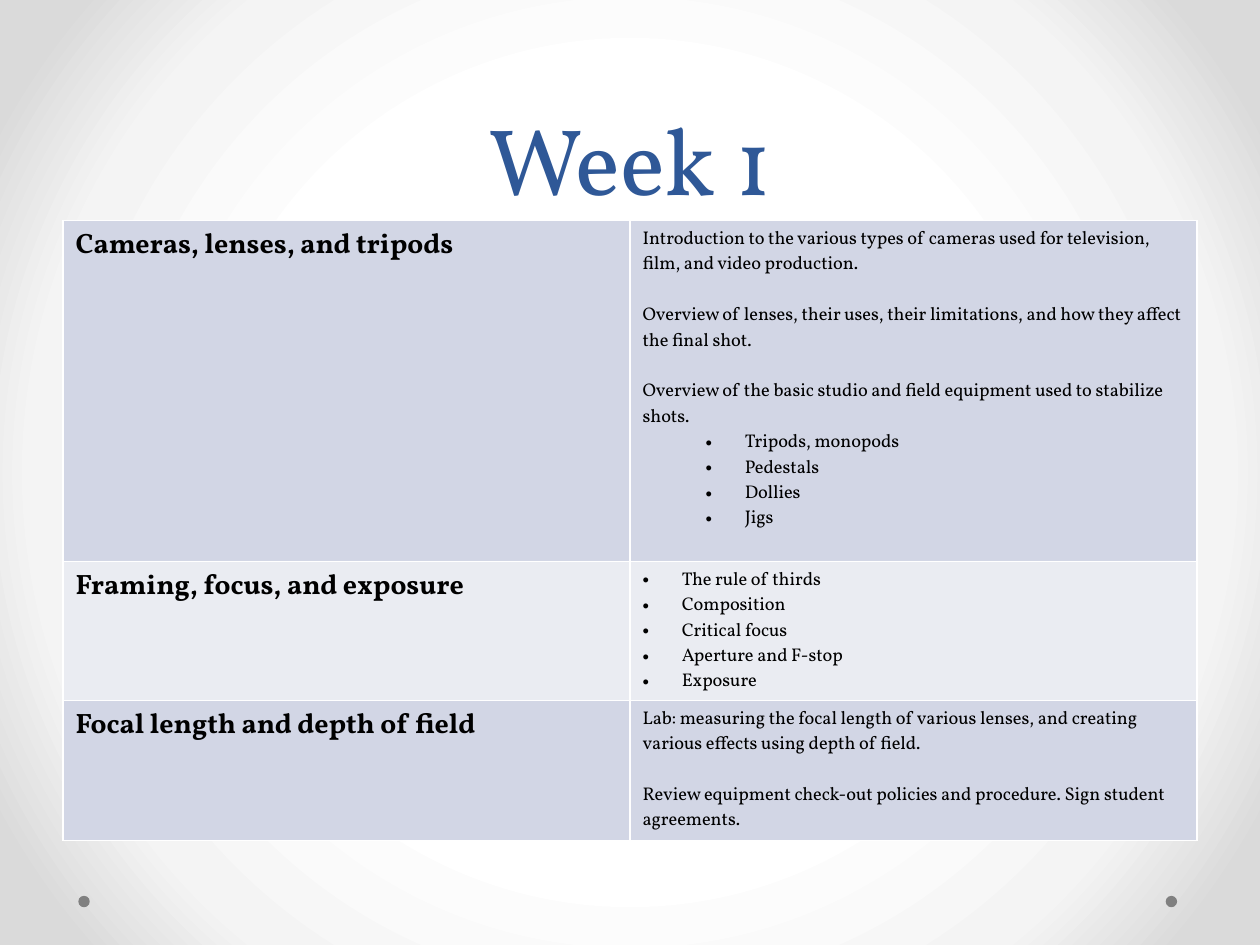
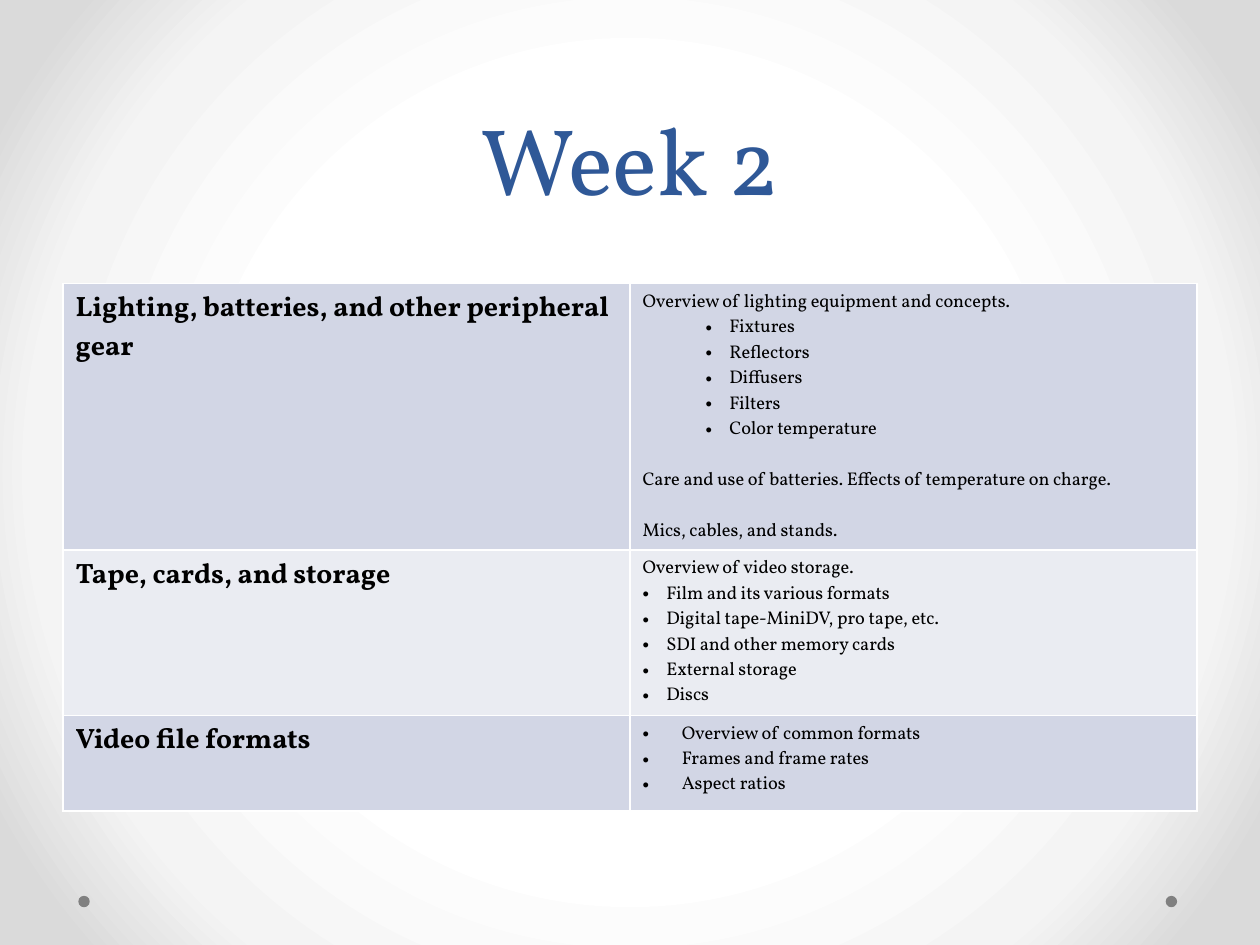
from pptx import Presentation
from pptx import util as u
from pptx.dml.color import RGBColor
from pptx.enum import shapes, text
from pptx.oxml import parse_xml
from pptx.oxml.ns import nsdecls, qn

FONT = "Vollkorn"
COLORS = {
    "title": "2F5897",
    "body": "000000",
    "dot": "808080",
    "border": "FFFFFF",
    "odd_row": "D2D6E5",
    "even_row": "EAECF2",
}
BACKGROUND_STOPS = [(50, "FFFFFF"), (76, "F4F4F4"), (92, "DADADA")]

TITLE_FORMAT = {"size": u.Pt(54), "bold": False}
TOPIC_FORMAT = {"size": u.Pt(16), "bold": True}
DETAIL_FORMAT = {"size": u.Pt(10.5), "bold": False}
PARAGRAPH_GAP = u.Pt(14.5)

MARGIN = 1.27
TABLE_WIDTH = 22.86
TITLE_HEIGHT = 4.45
LEVEL_INDENT = 1.27
WIDE, NARROW = 0.79, 0.48  # hanging indents of bullets


def plain(*lines, gap_first=False):
    """Return unbulleted paragraphs, with a blank line's gap between them."""
    return [{"text": line, "gap": gap_first or i > 0} for i, line in enumerate(lines)]


def bullets(hang, *lines, level=0):
    return [{"text": line, "hang": hang, "level": level} for line in lines]


WEEKS = [
    {
        "title": "Week 1",
        "top": 4.45,
        "rows": [
            (6.87, "Cameras, lenses, and tripods",
             plain("Introduction to the various types of cameras used for television, "
                   "film, and video production.",
                   "Overview of lenses, their uses, their limitations, and how they "
                   "affect the final shot.",
                   "Overview of the basic studio and field equipment used to "
                   "stabilize shots.")
             + bullets(WIDE, "Tripods, monopods", "Pedestals", "Dollies", "Jigs", level=1)),
            (2.8, "Framing, focus, and exposure",
             bullets(WIDE, "The rule of thirds", "Composition", "Critical focus",
                     "Aperture and F-stop", "Exposure")),
            (2.82, "Focal length and depth of field",
             plain("Lab: measuring the focal length of various lenses, and creating "
                   "various effects using depth of field.",
                   "Review equipment check-out policies and procedure. Sign student "
                   "agreements.")),
        ],
    },
    {
        "title": "Week 2",
        "top": 5.72,
        "rows": [
            (5.37, "Lighting, batteries, and other peripheral gear",
             plain("Overview of lighting equipment and concepts.")
             + bullets(NARROW, "Fixtures", "Reflectors", "Diffusers", "Filters",
                       "Color temperature", level=1)
             + plain("Care and use of batteries. Effects of temperature on charge.",
                     "Mics, cables, and stands.", gap_first=True)),
            (3.33, "Tape, cards, and storage",
             plain("Overview of video storage.")
             + bullets(NARROW, "Film and its various formats",
                       "Digital tape-MiniDV, pro tape, etc.",
                       "SDI and other memory cards", "External storage", "Discs")),
            (1.93, "Video file formats",
             bullets(WIDE, "Overview of common formats", "Frames and frame rates",
                     "Aspect ratios")),
        ],
    },
]


def color(name):
    return RGBColor.from_string(COLORS[name])


def set_background(master):
    """Give every slide a radial gradient, white at the centre."""
    master.background.fill.gradient()
    gradient = master._element.find(".//" + qn("p:bg")).find(".//" + qn("a:gradFill"))
    stops = "".join(
        f'<a:gs pos="{percent * 1000}"><a:srgbClr val="{value}"/></a:gs>'
        for percent, value in BACKGROUND_STOPS
    )
    radial = parse_xml(
        f'<a:gradFill {nsdecls("a")} rotWithShape="1"><a:gsLst>{stops}</a:gsLst>'
        '<a:path path="circle"><a:fillToRect l="50000" t="50000" r="50000" b="50000"/>'
        "</a:path></a:gradFill>"
    )
    gradient.getparent().replace(gradient, radial)


def add_span(para, words, font_format, color_name="body"):
    span = para.add_run()
    span.text = words
    span.font.name = FONT
    span.font.color.rgb = color(color_name)
    for name, value in font_format.items():
        setattr(span.font, name, value)


def add_dots(page):
    for left in (1.58, 23.5):
        dot = page.shapes.add_shape(
            shapes.MSO_SHAPE.OVAL, u.Cm(left), u.Cm(18.06), u.Cm(0.23), u.Cm(0.23))
        dot.shadow.inherit = False
        dot.fill.solid()
        dot.fill.fore_color.rgb = color("dot")
        dot.line.fill.background()


def add_title(page, words):
    box = page.shapes.add_textbox(
        u.Cm(MARGIN), 0, u.Cm(TABLE_WIDTH), u.Cm(TITLE_HEIGHT))
    frame = box.text_frame
    frame.word_wrap = True
    frame.vertical_anchor = text.MSO_ANCHOR.BOTTOM
    para = frame.paragraphs[0]
    para.alignment = text.PP_ALIGN.CENTER
    para.line_spacing = u.Pt(58)
    add_span(para, words, TITLE_FORMAT, "title")


def set_bullet(para, hang, level):
    para.level = level
    props = para._p.get_or_add_pPr()
    props.set("marL", str(u.Cm(level * LEVEL_INDENT + hang)))
    props.set("indent", str(-u.Cm(hang)))
    props.append(parse_xml(f'<a:buFont {nsdecls("a")} typeface="Arial"/>'))
    props.append(parse_xml(f'<a:buChar {nsdecls("a")} char="•"/>'))


def style_cell(cell, fill_name):
    props = cell._tc.get_or_add_tcPr()
    for side in ("lnL", "lnR", "lnT", "lnB"):
        props.append(parse_xml(
            f'<a:{side} {nsdecls("a")} w="{u.Pt(1)}"><a:solidFill>'
            f'<a:srgbClr val="{COLORS["border"]}"/></a:solidFill></a:{side}>'))
    cell.fill.solid()
    cell.fill.fore_color.rgb = color(fill_name)


def write_details(cell, details):
    frame = cell.text_frame
    for i, detail in enumerate(details):
        para = frame.add_paragraph() if i else frame.paragraphs[0]
        if detail.get("gap"):
            para.space_before = PARAGRAPH_GAP
        if "hang" in detail:
            set_bullet(para, detail["hang"], detail["level"])
        add_span(para, detail["text"], DETAIL_FORMAT)


def add_schedule(page, top, rows):
    height = sum(row[0] for row in rows)
    table = page.shapes.add_table(
        len(rows), 2, u.Cm(MARGIN), u.Cm(top), u.Cm(TABLE_WIDTH), u.Cm(height)).table
    table.first_row = False
    for i, (row_height, topic, details) in enumerate(rows):
        table.rows[i].height = u.Cm(row_height)
        topic_cell, detail_cell = table.rows[i].cells
        for cell in (topic_cell, detail_cell):
            style_cell(cell, "even_row" if i % 2 else "odd_row")
        add_span(topic_cell.text_frame.paragraphs[0], topic, TOPIC_FORMAT)
        write_details(detail_cell, details)


def main():
    deck = Presentation()
    deck.slide_width, deck.slide_height = u.Cm(25.4), u.Cm(19.05)
    set_background(deck.slide_master)
    for week in WEEKS:
        page = deck.slides.add_slide(deck.slide_layouts[6])
        add_dots(page)
        add_title(page, week["title"])
        add_schedule(page, week["top"], week["rows"])
    deck.save("out.pptx")


if __name__ == "__main__":
    main()
